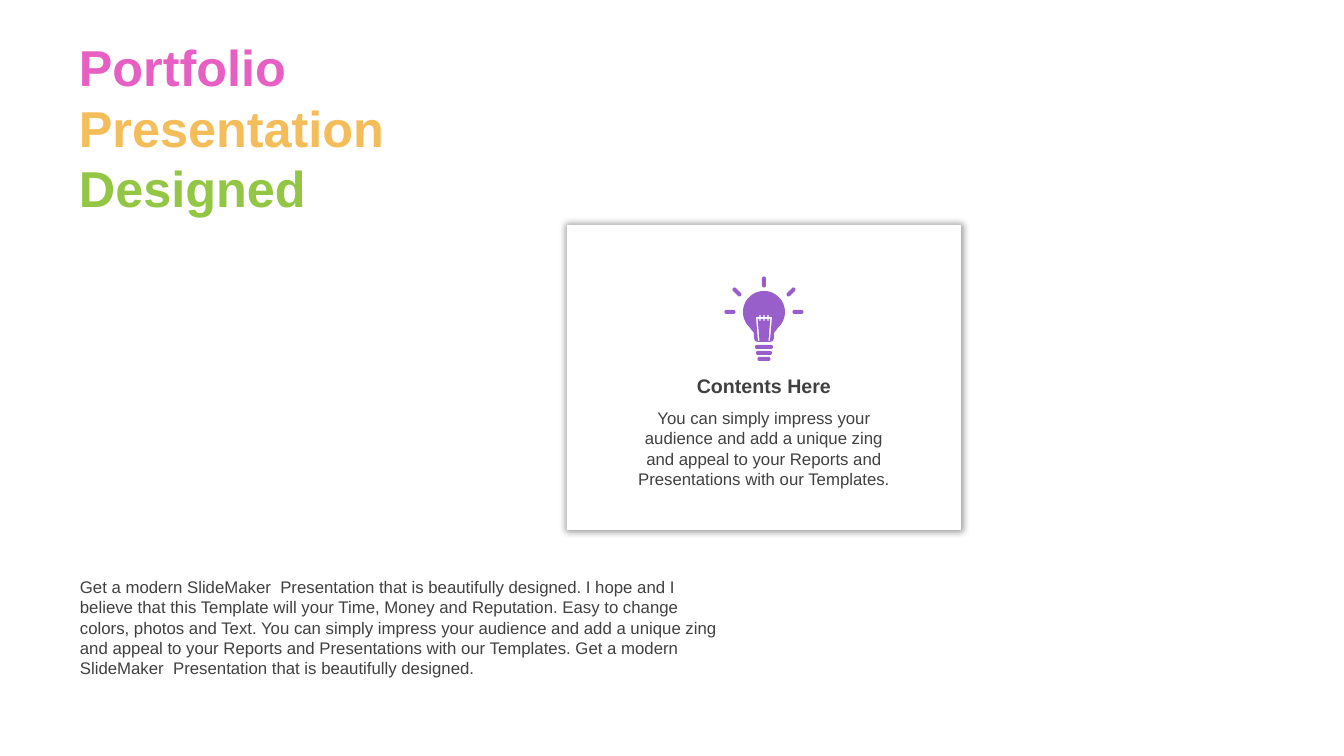
from math import cos, radians, sin

from lxml.etree import SubElement
from pptx import Presentation
from pptx.dml.color import RGBColor
from pptx.enum.shapes import MSO_SHAPE
from pptx.enum.text import MSO_ANCHOR, MSO_AUTO_SIZE, PP_ALIGN
from pptx.oxml.ns import qn
from pptx.util import Emu, Pt

PIXELS_PER_INCH = 100.8
EMU_PER_PIXEL = 914400 / PIXELS_PER_INCH
UNITS_PER_PIXEL = 100
FONT = "Arial"

WHITE = RGBColor(0xFF, 0xFF, 0xFF)
PINK = RGBColor(0xE8, 0x5F, 0xC4)
AMBER = RGBColor(0xF4, 0xBD, 0x59)
GREEN = RGBColor(0x92, 0xC6, 0x44)
PURPLE = RGBColor(0x98, 0x5E, 0xCA)
GREY = RGBColor(0x40, 0x40, 0x40)

BULB_X, BULB_Y, BULB_RADIUS = 764, 312, 21
RAYS = ((-34, 0, 0), (-27, -20, 45), (0, -30, 90), (27, -20, 135), (34, 0, 0))
BASE_WIDTHS = (18, 16, 13)
NECK = [(10, 21), (10, 26), (9, 29), (6, 30), (-6, 30), (-9, 29), (-10, 26), (-10, 21)]
HALF_FILAMENT = [
    (-0.7, 3), (-0.7, 5), (-3.3, 5), (-3.3, 3), (-4.7, 3), (-4.7, 5), (-8, 5), (-6, 29),
    (-4.5, 29), (-6.3, 7), (-4.7, 7), (-4.7, 9), (-3.3, 9), (-3.3, 7), (-0.7, 7), (-0.7, 9),
]

INTRODUCTION = (
    "Get a modern SlideMaker  Presentation that is beautifully designed. "
    "I hope and I believe that this Template will your Time, Money and Reputation. "
    "Easy to change colors, photos and Text. You can simply impress your audience "
    "and add a unique zing and appeal to your Reports and Presentations with our "
    "Templates. Get a modern SlideMaker  Presentation that is beautifully designed."
)
CARD_TEXT = (
    "You can simply impress your audience and add a unique zing and appeal "
    "to your Reports and Presentations with our Templates."
)


def px(length):
    return Emu(round(length * EMU_PER_PIXEL))


def paint(shape, color):
    shape.shadow.inherit = False
    shape.fill.solid()
    shape.fill.fore_color.rgb = color
    shape.line.fill.background()


def add_text(slide, box, runs, size, bold=False, align=PP_ALIGN.LEFT, anchor=MSO_ANCHOR.TOP):
    shape = slide.shapes.add_textbox(*map(px, box))
    frame = shape.text_frame
    frame.word_wrap = True
    frame.vertical_anchor = anchor
    if anchor == MSO_ANCHOR.TOP:
        frame.auto_size = MSO_AUTO_SIZE.SHAPE_TO_FIT_TEXT
    paragraph = frame.paragraphs[0]
    paragraph.alignment = align
    for text, color in runs:
        run = paragraph.add_run()
        run.text = text
        run.font.name = FONT
        run.font.size = Pt(size)
        run.font.bold = bold
        run.font.color.rgb = color


def add_card(slide, box):
    card = slide.shapes.add_shape(MSO_SHAPE.RECTANGLE, *map(px, box))
    paint(card, WHITE)
    effects = card._element.spPr.find(qn("a:effectLst"))
    shadow = SubElement(
        effects, qn("a:outerShdw"), blurRad=str(Pt(5)), sx="101000", sy="101000",
        algn="ctr", rotWithShape="0",
    )
    color = SubElement(shadow, qn("a:srgbClr"), val="000000")
    SubElement(color, qn("a:alpha"), val="40000")


def arc(radius, start, end, step, shift=0):
    return [
        (shift + radius * cos(radians(angle)), radius * sin(radians(angle)))
        for angle in range(start, end + 1, step)
    ]


def bar_outline(center_x, center_y, width, rotation=0):
    radius = 2
    reach = width / 2 - radius
    points = arc(radius, -90, 90, 15, reach) + arc(radius, 90, 270, 15, -reach)
    cosine, sine = cos(radians(rotation)), sin(radians(rotation))
    return [
        (center_x + x * cosine - y * sine, center_y + x * sine + y * cosine)
        for x, y in points
    ]


def add_bulb(slide):
    glass = arc(BULB_RADIUS, 135, 405, 5) + NECK
    filament = HALF_FILAMENT + [(-x, y) for x, y in reversed(HALF_FILAMENT)]
    rays = [bar_outline(x, y, 11, rotation) for x, y, rotation in RAYS]
    base = [bar_outline(0, 35 + 6 * row, width) for row, width in enumerate(BASE_WIDTHS)]

    builder = None
    for outline in [glass, filament, *rays, *base]:
        first, *others = [
            ((BULB_X + x) * UNITS_PER_PIXEL, (BULB_Y + y) * UNITS_PER_PIXEL) for x, y in outline
        ]
        if builder is None:
            builder = slide.shapes.build_freeform(*first, scale=EMU_PER_PIXEL / UNITS_PER_PIXEL)
        else:
            builder.move_to(*first)
        builder.add_line_segments(others, close=True)
    paint(builder.convert_to_shape(), PURPLE)


def main():
    presentation = Presentation()
    presentation.slide_width = px(1344)
    presentation.slide_height = px(756)
    slide = presentation.slides.add_slide(presentation.slide_layouts[6])

    add_card(slide, (567, 225, 394, 305))
    title = [("Portfolio ", PINK), ("Presentation ", AMBER), ("Designed", GREEN)]
    add_text(slide, (69, 40, 351, 174), title, 36, bold=True, anchor=MSO_ANCHOR.MIDDLE)
    add_text(slide, (628, 369, 272, 34), [("Contents Here", GREY)], 14, bold=True, align=PP_ALIGN.CENTER)
    add_text(slide, (628, 403, 272, 92), [(CARD_TEXT, GREY)], 12, align=PP_ALIGN.CENTER)
    add_text(slide, (70, 572, 672, 112), [(INTRODUCTION, GREY)], 12)
    add_bulb(slide)

    presentation.save("out.pptx")


if __name__ == "__main__":
    main()
